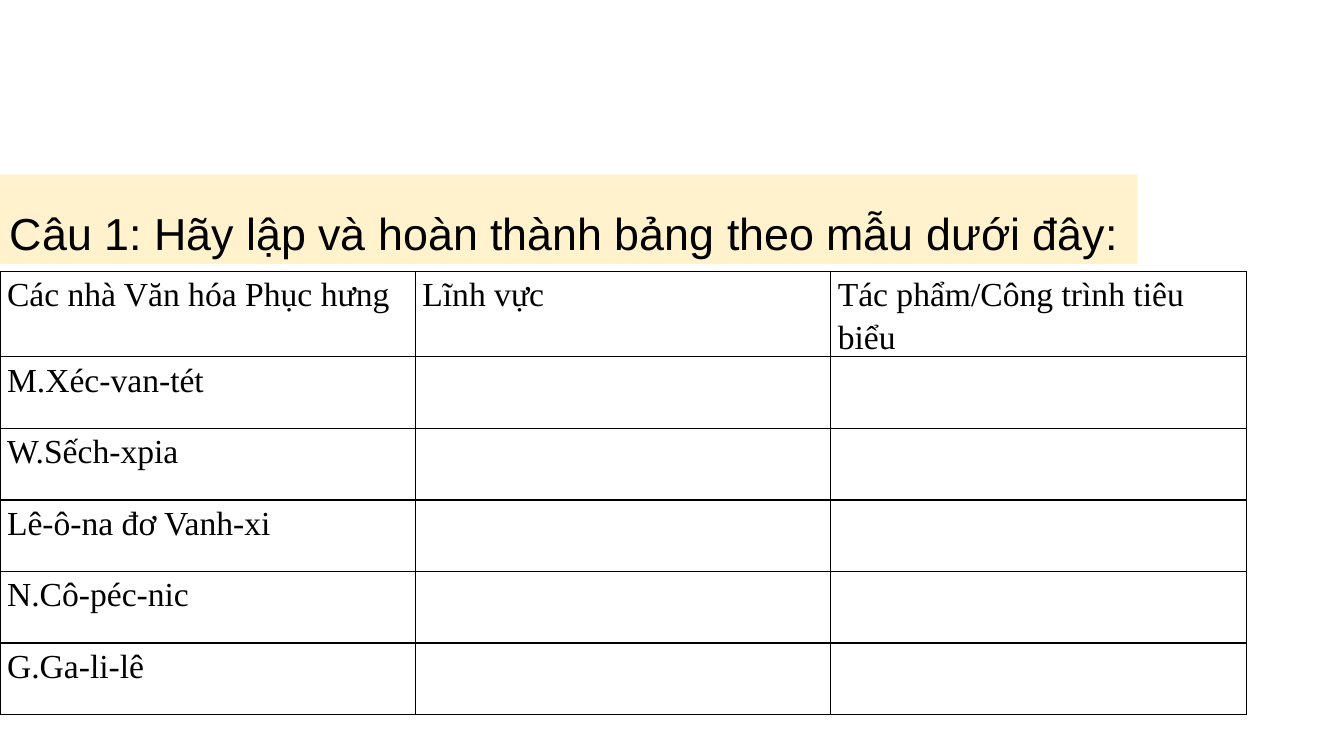
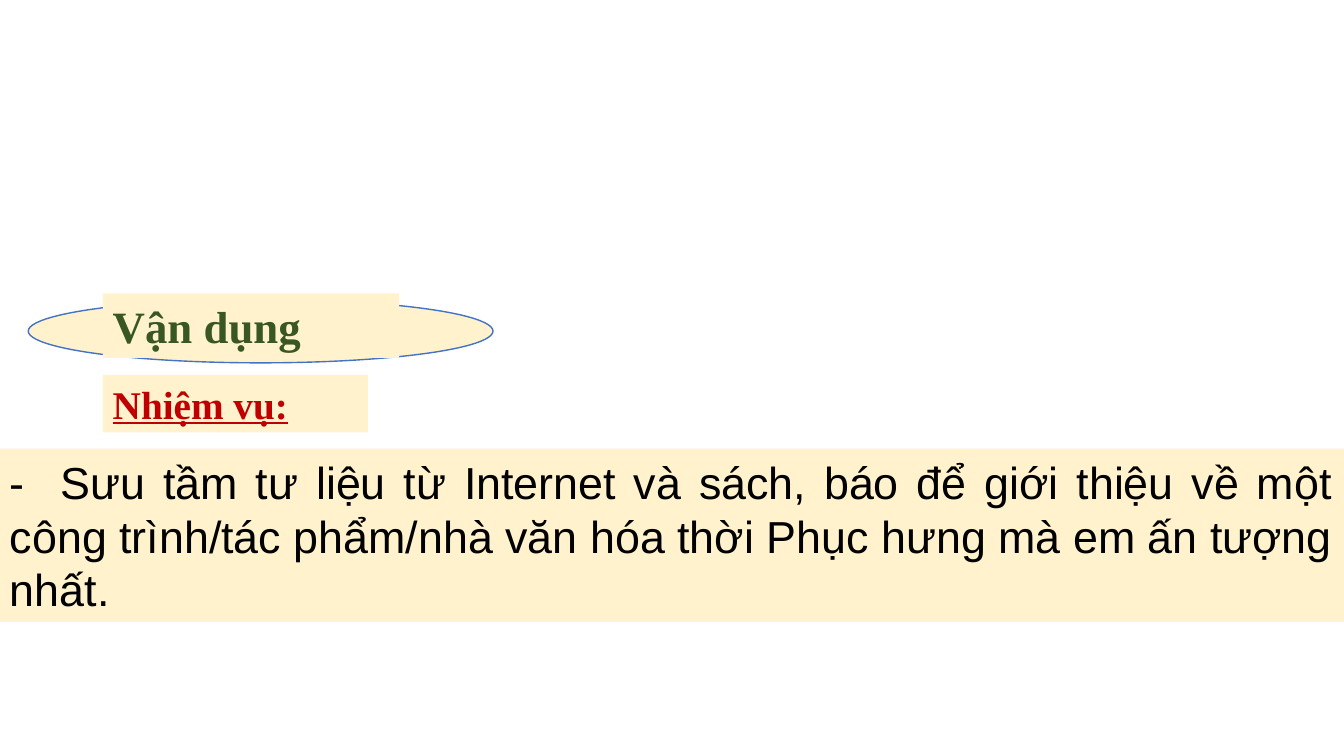
"""Build a two-slide Renaissance culture exercise: a table to fill in and a task."""
from lxml import etree
from pptx import Presentation
from pptx.dml.color import RGBColor
from pptx.enum.shapes import MSO_SHAPE
from pptx.enum.text import MSO_ANCHOR, PP_ALIGN
from pptx.oxml.ns import qn
from pptx.util import Inches, Pt

RECTANGLE, OVAL = MSO_SHAPE.RECTANGLE, MSO_SHAPE.OVAL
TOP, MIDDLE, BOTTOM = MSO_ANCHOR.TOP, MSO_ANCHOR.MIDDLE, MSO_ANCHOR.BOTTOM
LEFT, JUSTIFY = PP_ALIGN.LEFT, PP_ALIGN.JUSTIFY

COLORS = {"cream": "FFF2CC", "blue": "4472C4", "green": "385723",
          "red": "C00000", "black": "000000"}
BODY = {"name": "Arial", "size": Pt(32)}
HEADING = {"name": "Times New Roman", "size": Pt(32), "bold": True}
TASK = {"name": "Times New Roman", "size": Pt(28), "bold": True, "underline": True}
CELL = {"name": "Times New Roman", "size": Pt(24), "bold": False}


def write(paragraph, text, font_format, color="black", align=LEFT):
    paragraph.alignment = align
    run = paragraph.add_run()
    run.text = text
    for attribute, value in font_format.items():
        setattr(run.font, attribute, value)
    run.font.color.rgb = RGBColor.from_string(COLORS[color])


def add_cream_shape(slide, kind, left, top, width, height, anchor=TOP):
    shape = slide.shapes.add_shape(
        kind, Inches(left), Inches(top), Inches(width), Inches(height))
    shape.shadow.inherit = False
    shape.fill.solid()
    shape.fill.fore_color.rgb = RGBColor.from_string(COLORS["cream"])
    shape.line.fill.background()
    shape.text_frame.word_wrap = True
    shape.text_frame.vertical_anchor = anchor
    return shape


presentation = Presentation()
presentation.slide_width = Inches(13.33)
presentation.slide_height = Inches(7.5)
blank_layout = presentation.slide_layouts[6]

slide = presentation.slides.add_slide(blank_layout)
headers = ["Các nhà Văn hóa Phục hưng", "Lĩnh vực", "Tác phẩm/Công trình tiêu biểu"]
people = ["M.Xéc-van-tét", "W.Sếch-xpia", "Lê-ô-na đơ Vanh-xi", "N.Cô-péc-nic", "G.Ga-li-lê"]
rows = [headers] + [[person, "", ""] for person in people]
table = slide.shapes.add_table(
    len(rows), len(headers), Inches(0), Inches(2.69), Inches(12.36), Inches(4.4)).table
table.first_row = False
table.horz_banding = False
for column in table.columns:
    column.width = Inches(4.12)
for row_index, texts in enumerate(rows):
    table.rows[row_index].height = Inches(0.71 if row_index else 0.85)
    for column_index, text in enumerate(texts):
        cell = table.cell(row_index, column_index)
        cell.margin_left = cell.margin_right = Inches(0.07)
        cell.margin_top = cell.margin_bottom = Inches(0)
        cell_properties = cell._tc.get_or_add_tcPr()
        for side in ("lnL", "lnR", "lnT", "lnB"):
            border = etree.SubElement(cell_properties, qn(f"a:{side}"), w=str(Pt(1)))
            border_fill = etree.SubElement(border, qn("a:solidFill"))
            etree.SubElement(border_fill, qn("a:srgbClr"), val=COLORS["black"])
        cell.fill.background()
        if text:
            paragraph = cell.text_frame.paragraphs[0]
            paragraph.line_spacing = 1.15
            write(paragraph, text, CELL)

question = add_cream_shape(slide, RECTANGLE, 0, 1.73, 11.28, 0.89, BOTTOM)
write(question.text_frame.paragraphs[0],
      "Câu 1: Hãy lập và hoàn thành bảng theo mẫu dưới đây:", BODY)

slide = presentation.slides.add_slide(blank_layout)
ellipse = add_cream_shape(slide, OVAL, 0.28, 2.97, 4.61, 0.63)
ellipse.line.color.rgb = RGBColor.from_string(COLORS["blue"])
ellipse.line.width = Pt(1)

heading = add_cream_shape(slide, RECTANGLE, 1.02, 2.91, 2.94, 0.64)
write(heading.text_frame.paragraphs[0], "Vận dụng", HEADING, "green")

task_label = add_cream_shape(slide, RECTANGLE, 1.02, 3.72, 2.63, 0.57)
write(task_label.text_frame.paragraphs[0], "Nhiệm vụ:", TASK, "red")

task = add_cream_shape(slide, RECTANGLE, 0, 4.45, 13.33, 1.72, MIDDLE)
paragraph = task.text_frame.paragraphs[0]
tab_stops = etree.SubElement(paragraph._p.get_or_add_pPr(), qn("a:tabLst"))
etree.SubElement(tab_stops, qn("a:tab"), pos=str(Inches(0.5)), algn="l")
write(paragraph,
      "-\tSưu tầm tư liệu từ Internet và sách, báo để giới thiệu về một công trình/tác phẩm/"
      "nhà văn hóa thời Phục hưng mà em ấn tượng nhất.", BODY, align=JUSTIFY)

presentation.save("out.pptx")
